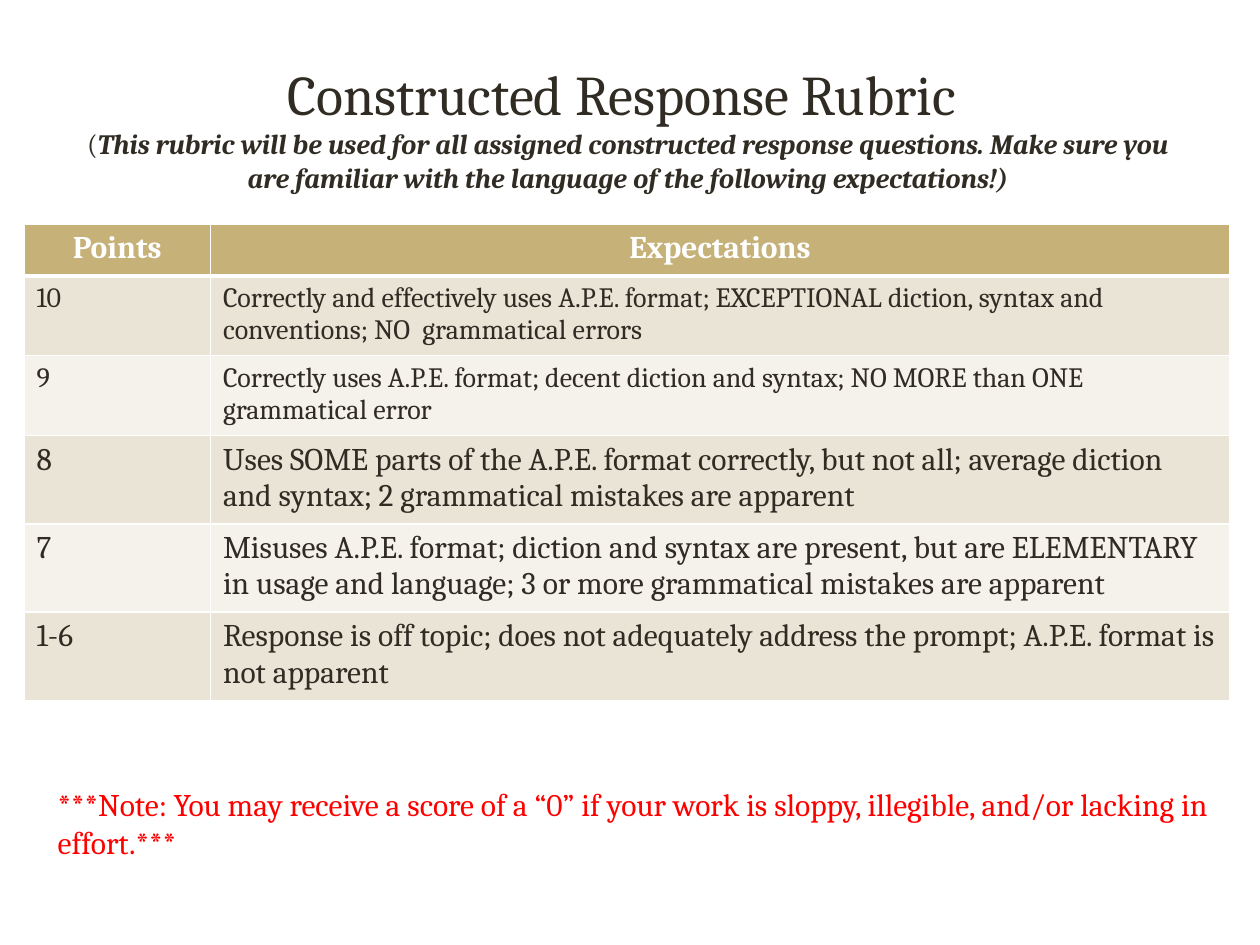
"""Build the constructed response rubric slide."""
import pptx
import pptx.dml.color
import pptx.enum.text
import pptx.oxml.ns
import pptx.util
from lxml import etree

Inches = pptx.util.Inches
ALIGN = pptx.enum.text.PP_ALIGN
ANCHOR = pptx.enum.text.MSO_ANCHOR

FONT = "Cambria"
COLORS = {
    "text": "302C24",
    "white": "FFFFFF",
    "header": "C6B178",
    "odd": "EAE4D6",
    "even": "F5F2EC",
    "note": "FF0000",
}
TITLE = "Constructed Response Rubric "
SUBTITLE = (
    "This rubric will be used for all assigned constructed response questions. "
    "Make sure you are familiar with the language of the following expectations!)"
)
HEADER = ("Points", "Expectations")
RUBRIC = [
    ("10", "Correctly and effectively uses A.P.E. format; EXCEPTIONAL diction, "
           "syntax and conventions; NO  grammatical errors", 16),
    ("9", "Correctly uses A.P.E. format; decent diction and syntax; "
          "NO MORE than ONE grammatical error", 16),
    ("8", "Uses SOME parts of the A.P.E. format correctly, but not all; "
          "average diction and syntax; 2 grammatical mistakes are apparent", 18),
    ("7", "Misuses A.P.E. format; diction and syntax are present, but are ELEMENTARY "
          "in usage and language; 3 or more grammatical mistakes are apparent", 18),
    ("1-6", "Response is off topic; does not adequately address the prompt; "
            "A.P.E. format is not apparent", 18),
]
NOTE = (
    "***Note: You may receive a score of a “0” if your work is sloppy, illegible, "
    "and/or lacking in effort.***"
)
COLUMN_WIDTHS = (1.48, 8.09)
ROW_HEIGHT = 0.41


def rgb(name):
    return pptx.dml.color.RGBColor.from_string(COLORS[name])


def add_span(para, text, size, color="text", bold=False, italic=False):
    span = para.add_run()
    span.text = text
    font = span.font
    font.name, font.size = FONT, pptx.util.Pt(size)
    font.bold, font.italic = bold, italic
    font.color.rgb = rgb(color)


def add_box(page, left, top, width, height, anchor):
    box = page.shapes.add_textbox(*map(Inches, (left, top, width, height)))
    box.text_frame.word_wrap = True
    box.text_frame.vertical_anchor = anchor
    return box.text_frame.paragraphs[0]


def set_borders(cell, bottom):
    properties = cell._tc.get_or_add_tcPr()
    for side, points in (("L", 1), ("R", 1), ("T", 1), ("B", bottom)):
        line = etree.SubElement(properties, pptx.oxml.ns.qn(f"a:ln{side}"),
                                w=str(pptx.util.Pt(points)))
        fill = etree.SubElement(line, pptx.oxml.ns.qn("a:solidFill"))
        etree.SubElement(fill, pptx.oxml.ns.qn("a:srgbClr"), val=COLORS["white"])


def fill_row(table, index, texts, size, fill, color="text", header=False):
    for column, text in enumerate(texts):
        cell = table.cell(index, column)
        set_borders(cell, 3 if header else 1)
        cell.fill.solid()
        cell.fill.fore_color.rgb = rgb(fill)
        para = cell.text_frame.paragraphs[0]
        para.alignment = ALIGN.CENTER if header else ALIGN.LEFT
        add_span(para, text, size, color, bold=header)


def add_rubric(page):
    count = len(RUBRIC) + 1
    table = page.shapes.add_table(
        count, len(HEADER), Inches(0.19), Inches(1.78),
        Inches(sum(COLUMN_WIDTHS)), Inches(ROW_HEIGHT * count)).table
    for column, width in zip(table.columns, COLUMN_WIDTHS):
        column.width = Inches(width)
    fill_row(table, 0, HEADER, 18, "header", "white", header=True)
    for index, (points, expectation, size) in enumerate(RUBRIC, 1):
        fill_row(table, index, (points, expectation), size, "odd" if index % 2 else "even")


def main():
    deck = pptx.Presentation()
    deck.slide_width, deck.slide_height = Inches(10), Inches(7.5)
    page = deck.slides.add_slide(deck.slide_layouts[6])

    title = add_box(page, 0.53, 0, 8.91, 1.59, ANCHOR.BOTTOM)
    title.alignment = ALIGN.CENTER
    add_span(title, TITLE, 32)
    title.add_line_break()
    add_span(title, "(", 16)
    add_span(title, SUBTITLE, 16, bold=True, italic=True)

    add_rubric(page)
    note = add_box(page, 0.36, 6.18, 9.4, 0.71, ANCHOR.TOP)
    add_span(note, NOTE, 18, "note")
    deck.save("out.pptx")


if __name__ == "__main__":
    main()
